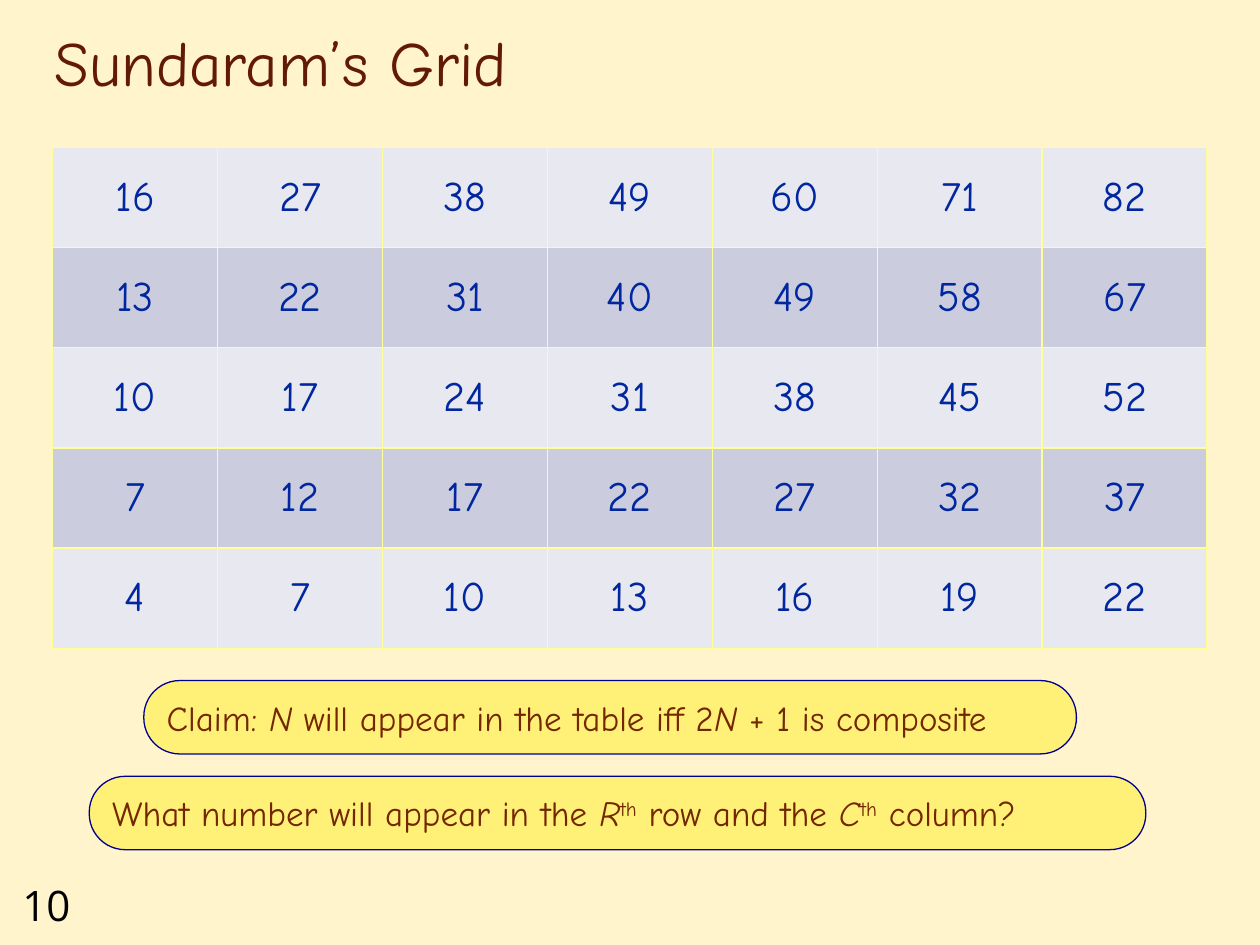
from lxml.etree import SubElement
from pptx import Presentation
from pptx.dml.color import RGBColor
from pptx.enum.shapes import MSO_SHAPE as Shape
from pptx.enum.text import MSO_ANCHOR as Anchor, MSO_AUTO_SIZE as AutoSize, PP_ALIGN as Align
from pptx.oxml.ns import qn
from pptx.util import Cm, Pt

COLORS = {
    "background": "FFF4CB", "title": "631908", "number": "00279F",
    "light_row": "E7E8F0", "dark_row": "CBCDDF", "border": "FFFF99",
    "callout": "FFF077", "outline": "000090", "callout_text": "732600",
    "page": "000000",
}
ROWS, COLS = 5, 7


def rgb(name):
    return RGBColor.from_string(COLORS[name])


class SlideBuilder:
    font = "Comic Neue"
    page_font = "Open Sans"

    def __init__(self, prs):
        self.s = prs.slides.add_slide(prs.slide_layouts[5])
        fill = self.s.background.fill
        fill.solid()
        fill.fore_color.rgb = rgb("background")

    def style(self, r, size, color, name=None):
        r.font.name = name or self.font
        r.font.size = Pt(size)
        r.font.color.rgb = rgb(color)

    def title(self, text, *box):
        sp = self.s.shapes.title
        sp.left, sp.top, sp.width, sp.height = map(Cm, box)
        tf = sp.text_frame
        tf.text = text
        tf.auto_size = AutoSize.NONE
        tf.vertical_anchor = Anchor.BOTTOM
        p = tf.paragraphs[0]
        p.alignment = Align.LEFT
        self.style(p.runs[0], 36, "title")

    def page_number(self, text, *box):
        tf = self.s.shapes.add_textbox(*map(Cm, box)).text_frame
        tf.word_wrap = True
        tf.text = text
        self.style(tf.paragraphs[0].runs[0], 24, "page", self.page_font)

    def border(self, cell):
        tcPr = cell._tc.get_or_add_tcPr()
        for i, side in enumerate(("a:lnL", "a:lnR", "a:lnT", "a:lnB")):
            ln = tcPr.makeelement(qn(side), {"w": str(Pt(1))})
            SubElement(SubElement(ln, qn("a:solidFill")), qn("a:srgbClr"), val=COLORS["border"])
            tcPr.insert(i, ln)

    def table(self, values, *box):
        table = self.s.shapes.add_table(len(values), len(values[0]), *map(Cm, box)).table
        table.first_row = False
        for i, row in enumerate(values):
            for j, value in enumerate(row):
                cell = table.cell(i, j)
                cell.text = str(value)
                cell.vertical_anchor = Anchor.MIDDLE
                p = cell.text_frame.paragraphs[0]
                p.alignment = Align.CENTER
                self.style(p.runs[0], 24, "number")
                cell.fill.solid()
                cell.fill.fore_color.rgb = rgb("dark_row" if i % 2 else "light_row")
                self.border(cell)

    def callout(self, parts, *box):
        """Add a rounded box; parts are (text, kind), kind being "", "italic" or "super"."""
        sp = self.s.shapes.add_shape(Shape.ROUNDED_RECTANGLE, *map(Cm, box))
        sp.adjustments[0] = 0.49
        sp.shadow.inherit = False
        sp.fill.solid()
        sp.fill.fore_color.rgb = rgb("callout")
        sp.line.color.rgb = rgb("outline")
        sp.line.width = Pt(0.75)
        tf = sp.text_frame
        tf.word_wrap = True
        tf.vertical_anchor = Anchor.MIDDLE
        p = tf.paragraphs[0]
        p.alignment = Align.LEFT
        for text, kind in parts:
            r = p.add_run()
            r.text = text
            self.style(r, 20, "callout_text")
            if kind == "italic":
                r.font.italic = True
            elif kind == "super":
                r._r.get_or_add_rPr().set("baseline", "30000")


def sundaram(row, col):
    return row + col + 2 * row * col


def main():
    prs = Presentation()
    prs.slide_width, prs.slide_height = Cm(25.4), Cm(19.05)
    slide = SlideBuilder(prs)
    slide.page_number("10", 0.2, 17.6, 1.9, 1.27)
    slide.title("Sundaram’s Grid", 0.84, 0.43, 21.6, 1.7)
    grid = [[sundaram(row, col) for col in range(1, COLS + 1)] for row in range(ROWS, 0, -1)]
    slide.table(grid, 1.06, 2.97, 23.28, 10.1)
    slide.callout([
        ("What number will appear in the ", ""), ("R", "italic"), ("th", "super"),
        (" row and the ", ""), ("C", "italic"), ("th", "super"), (" column?", ""),
    ], 1.8, 15.65, 21.3, 1.48)
    slide.callout([
        ("Claim: ", ""), ("N", "italic"), (" will appear in the table iff 2", ""),
        ("N", "italic"), (" + 1 is composite", ""),
    ], 2.9, 13.72, 18.8, 1.48)
    prs.save("out.pptx")


if __name__ == "__main__":
    main()
